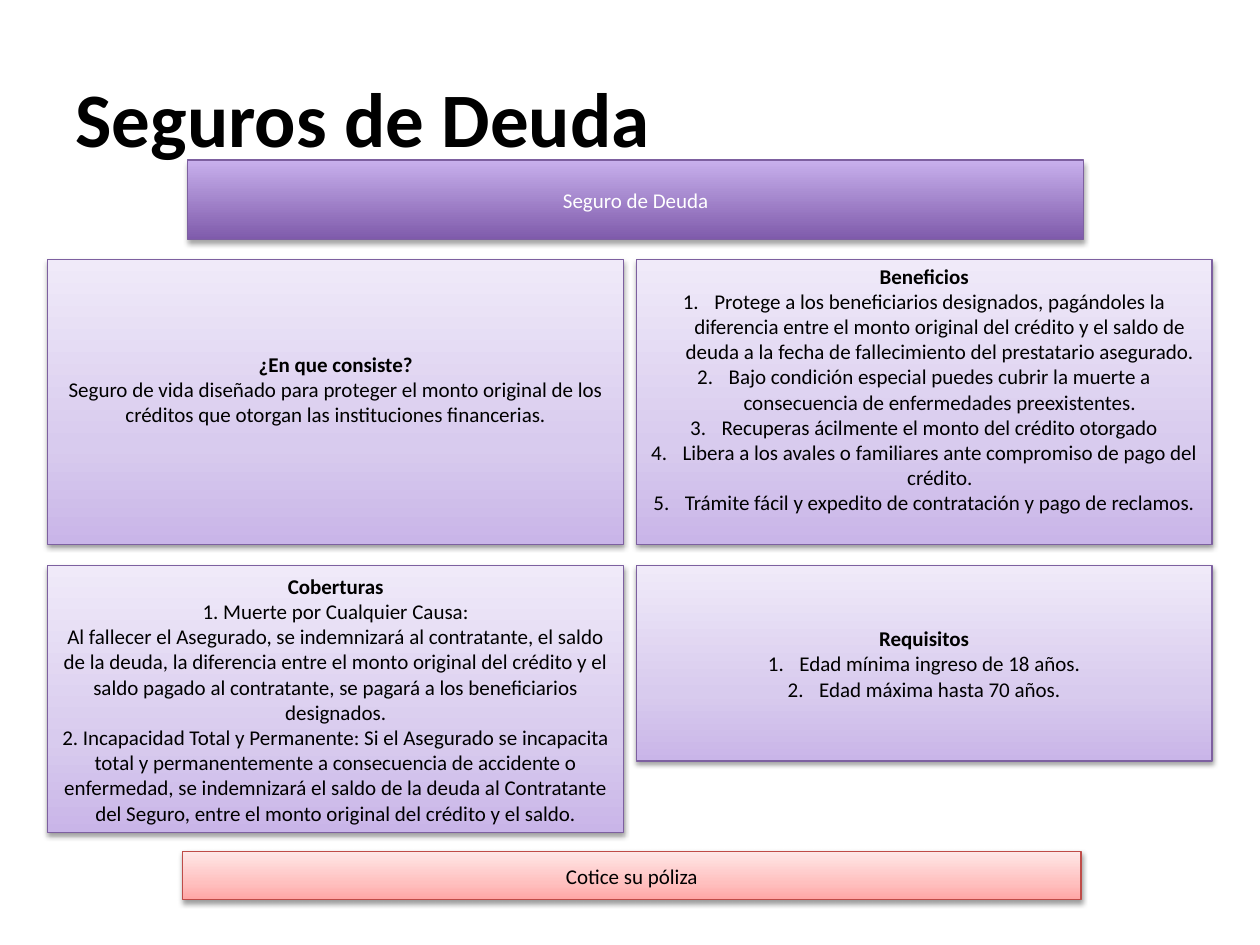
from lxml import etree
from pptx import Presentation
from pptx.dml.color import RGBColor
from pptx.enum.shapes import MSO_SHAPE
from pptx.enum.text import MSO_ANCHOR, MSO_AUTO_SIZE, PP_ALIGN
from pptx.oxml.ns import qn
from pptx.util import Inches, Pt

RECTANGLE = MSO_SHAPE.RECTANGLE
MIDDLE = MSO_ANCHOR.MIDDLE
NO_AUTOFIT = MSO_AUTO_SIZE.NONE
LEFT, CENTER = PP_ALIGN.LEFT, PP_ALIGN.CENTER

FONT = "Calibri"
COLORS = {"black": "000000", "white": "FFFFFF", "purple": "7D60A0", "red": "BF4C48"}
# Gradient stops run from the bottom edge to the top edge
GRADIENTS = {
    "header": [(0, "7F5BAB"), (100, "C8B0ED")],
    "panel": [(0, "C9B5E8"), (35, "D8CBEE"), (100, "F0EAF9")],
    "button": [(0, "FFA6A5"), (35, "FFC0BF"), (100, "FFE7E7")],
}

LEFT_COLUMN, RIGHT_COLUMN = 0.38, 5.05
TOP_ROW, BOTTOM_ROW = 2.06, 4.49
PANEL_WIDTH = 4.57
BLANK_LINE = 0.2

# Each panel: left, top, height, room below the text, heading, body, numbered
PANELS = [
    (LEFT_COLUMN, TOP_ROW, 2.26, BLANK_LINE, "¿En que consiste?", [
        "Seguro de vida diseñado para proteger el monto original de los créditos "
        "que otorgan las instituciones financerias.",
    ], False),
    (RIGHT_COLUMN, TOP_ROW, 2.26, BLANK_LINE, "Beneficios", [
        "Protege a los beneficiarios designados, pagándoles la diferencia entre el "
        "monto original del crédito y el saldo de deuda a la fecha de fallecimiento "
        "del prestatario asegurado.",
        "Bajo condición especial puedes cubrir la muerte a consecuencia de "
        "enfermedades preexistentes.",
        "Recuperas ácilmente el monto del crédito otorgado",
        "Libera a los avales o familiares ante compromiso de pago del crédito.",
        "Trámite fácil y expedito de contratación y pago de reclamos.",
    ], True),
    (LEFT_COLUMN, BOTTOM_ROW, 2.12, 0, "Coberturas", [
        "1. Muerte por Cualquier Causa:",
        "Al fallecer el Asegurado, se indemnizará al contratante, el saldo de la "
        "deuda, la diferencia entre el monto original del crédito y el saldo pagado "
        "al contratante, se pagará a los beneficiarios designados.",
        "2. Incapacidad Total y Permanente: Si el Asegurado se incapacita total y "
        "permanentemente a consecuencia de accidente o enfermedad, se indemnizará "
        "el saldo de la deuda al Contratante del Seguro, entre el monto original "
        "del crédito y el saldo.",
    ], False),
    (RIGHT_COLUMN, BOTTOM_ROW, 1.55, 0, "Requisitos", [
        "Edad mínima ingreso de 18 años.",
        "Edad máxima hasta 70 años.",
    ], True),
]


def set_gradient(shape, stops):
    shape.fill.gradient()
    shape.fill.gradient_angle = 90
    stop_list = shape._element.spPr.find(".//" + qn("a:gsLst"))
    for old_stop in list(stop_list):
        stop_list.remove(old_stop)
    for position, color in stops:
        stop = etree.SubElement(stop_list, qn("a:gs"), pos=str(position * 1000))
        etree.SubElement(stop, qn("a:srgbClr"), val=color)


def set_shadow(shape, opacity, distance):
    shape.shadow.inherit = False
    effects = shape._element.spPr.find(qn("a:effectLst"))
    shadow = etree.SubElement(effects, qn("a:outerShdw"), blurRad=str(Pt(3.1)),
                              dist=str(Pt(distance)), dir="5400000", rotWithShape="0")
    color = etree.SubElement(shadow, qn("a:srgbClr"), val=COLORS["black"])
    etree.SubElement(color, qn("a:alpha"), val=str(opacity * 1000))


def number_paragraph(para):
    properties = para._p.get_or_add_pPr()
    properties.set("marL", str(Inches(0.25)))
    properties.set("indent", str(Inches(-0.25)))
    etree.SubElement(properties, qn("a:buFont"), typeface="+mj-lt")
    etree.SubElement(properties, qn("a:buAutoNum"), type="arabicPeriod")


def format_paragraph(para, size=12, color="black", bold=False, align=CENTER):
    para.alignment = align
    para.font.name = FONT
    para.font.size = Pt(size)
    para.font.bold = bold
    para.font.color.rgb = RGBColor.from_string(COLORS[color])


def add_box(page, box, gradient, line, opacity=38, distance=1.6):
    shape = page.shapes.add_shape(RECTANGLE, *map(Inches, box))
    set_gradient(shape, GRADIENTS[gradient])
    shape.line.color.rgb = RGBColor.from_string(COLORS[line])
    shape.line.width = Pt(0.75)
    set_shadow(shape, opacity, distance)
    shape.text_frame.word_wrap = True
    shape.text_frame.vertical_anchor = MIDDLE
    return shape


def add_title(page, box):
    title = page.shapes.title
    title.left, title.top, title.width, title.height = map(Inches, box)
    frame = title.text_frame
    frame.text = "Seguros de Deuda"
    frame.vertical_anchor = MIDDLE
    frame.auto_size = NO_AUTOFIT
    format_paragraph(frame.paragraphs[0], size=44, bold=True, align=LEFT)


def add_header(page, box):
    frame = add_box(page, box, "header", "purple", opacity=35, distance=1.8).text_frame
    frame.text = "Seguro de Deuda"
    format_paragraph(frame.paragraphs[0], color="white")


def add_panel(page, box, room_below, heading, body, numbered):
    frame = add_box(page, box, "panel", "purple").text_frame
    frame.margin_bottom = Inches(0.05 + room_below)
    frame.text = heading
    format_paragraph(frame.paragraphs[0], bold=True)
    for text in body:
        para = frame.add_paragraph()
        para.text = text
        if numbered:
            number_paragraph(para)
        format_paragraph(para)


def add_button(page, box):
    frame = add_box(page, box, "button", "red").text_frame
    frame.text = "Cotice su póliza"
    format_paragraph(frame.paragraphs[0])


def main():
    deck = Presentation()
    deck.slide_width, deck.slide_height = Inches(10), Inches(7.5)
    page = deck.slides.add_slide(deck.slide_layouts[5])

    # Title and header bar
    add_title(page, (0.5, 0.3, 6.32, 1.25))
    add_header(page, (1.49, 1.27, 7.11, 0.63))

    # Two columns of panels
    for left, top, height, *content in PANELS:
        add_panel(page, (left, top, PANEL_WIDTH, height), *content)

    # Call to action
    add_button(page, (1.45, 6.76, 7.13, 0.38))
    deck.save("out.pptx")


if __name__ == "__main__":
    main()
